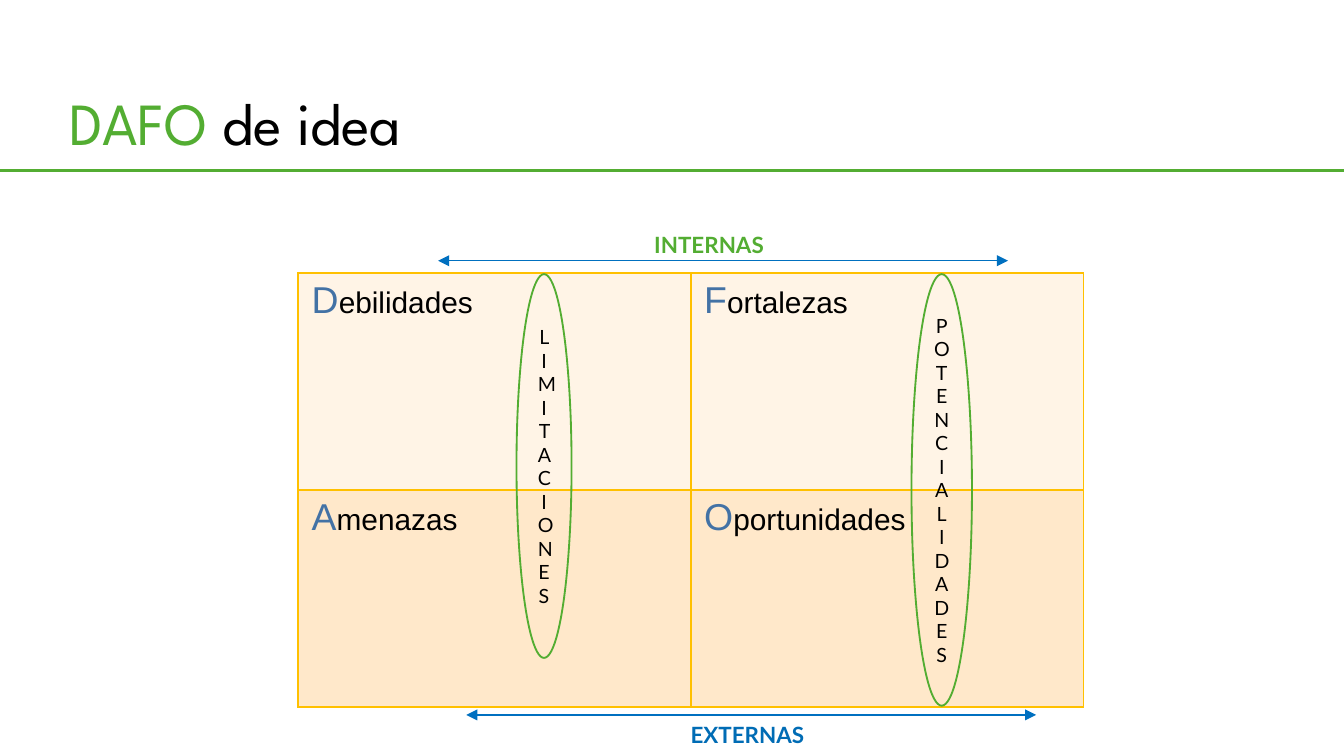
from lxml import etree
from pptx import Presentation
from pptx.dml.color import RGBColor
from pptx.enum import shapes as sh, text as tx
from pptx.oxml.ns import qn
from pptx.util import Pt

HUES = {"green": "53AD32", "blue": "0070C0", "navy": "006CB5", "steel": "4372A5",
        "gold": "FFC000", "black": "000000", "cream": "FFF4E6", "peach": "FFE8CA"}

TITLE = [("DAFO ", "green"), ("de idea", "black")]
GRID = [("cream", ["Debilidades", "Fortalezas"]),
        ("peach", ["Amenazas", "Oportunidades"])]
# left, top, width, height, paragraphs
OVALS = [(276.7, 146.9, 29.5, 205.6, ["L IMITACIONES"]),
         (488.3, 146.9, 32.4, 231.2, ["POTENCIAL", "IDADES"])]
# left, top, width, text, colour
LABELS = [(343.4, 120.2, 118.8, "INTERNAS", "green"),
          (362.9, 383, 126, "EXTERNAS", "navy")]
# from x, to x, y, colour, width, arrowheads
LINES = [(249.8, 555.1, 383, "blue", 0.75, True),
         (234.7, 540, 139.7, "blue", 0.75, True),
         (0, 720, 91.4, "green", 2, False)]
LEFT, TOP, CELL_W, CELL_H = 159.8, 146.2, 210.3, 116.3


def rgb(hue):
    return RGBColor.from_string(HUES[hue])


def write(para, words, size, font, hue="black", bold=False, align=tx.PP_ALIGN.LEFT):
    para.alignment = align
    run = para.add_run()
    run.text = words
    run.font.size, run.font.name, run.font.bold = Pt(size), font, bold
    run.font.color.rgb = rgb(hue)


def edge(cell, hue, width):
    """Draw all four borders of a table cell."""
    props = cell._tc.get_or_add_tcPr()
    for i, side in enumerate("LRTB"):
        line = etree.Element(qn("a:ln" + side), w=str(Pt(width)))
        fill = etree.SubElement(line, qn("a:solidFill"))
        etree.SubElement(fill, qn("a:srgbClr"), val=HUES[hue])
        props.insert(i, line)


def add_grid(slide):
    frame = slide.shapes.add_table(2, 2, Pt(LEFT), Pt(TOP), Pt(2 * CELL_W), Pt(2 * CELL_H))
    table = frame.table
    for i, (fill, names) in enumerate(GRID):
        table.columns[i].width, table.rows[i].height = Pt(CELL_W), Pt(CELL_H)
        for j, name in enumerate(names):
            cell = table.cell(i, j)
            cell.fill.solid()
            cell.fill.fore_color.rgb = rgb(fill)
            edge(cell, "gold", 1)
            para = cell.text_frame.paragraphs[0]
            write(para, name[0], 20, "Arial", "steel")
            write(para, name[1:], 16, "Arial")


def add_oval(slide, left, top, width, height, parts):
    oval = slide.shapes.add_shape(sh.MSO_SHAPE.OVAL, Pt(left), Pt(top), Pt(width), Pt(height))
    oval.shadow.inherit = False
    oval.fill.background()
    oval.line.color.rgb, oval.line.width = rgb("green"), Pt(1)
    frame = oval.text_frame
    frame.word_wrap = True
    frame.vertical_anchor = tx.MSO_ANCHOR.MIDDLE
    for i, part in enumerate(parts):
        para = frame.add_paragraph() if i else frame.paragraphs[0]
        write(para, part, 10.5, "Lato", align=tx.PP_ALIGN.CENTER)


def add_line(slide, start, end, y, hue, width, heads):
    line = slide.shapes.add_connector(sh.MSO_CONNECTOR.STRAIGHT, Pt(start), Pt(y), Pt(end), Pt(y))
    line.line.color.rgb, line.line.width = rgb(hue), Pt(width)
    etree.SubElement(line._element.spPr, qn("a:effectLst"))
    if heads:
        for tag in ("a:headEnd", "a:tailEnd"):
            etree.SubElement(line.line._get_or_add_ln(), qn(tag), type="triangle")


def add_label(slide, left, top, width, words, hue):
    frame = slide.shapes.add_textbox(Pt(left), Pt(top), Pt(width), Pt(21.8)).text_frame
    frame.word_wrap = True
    frame.auto_size = tx.MSO_AUTO_SIZE.SHAPE_TO_FIT_TEXT
    write(frame.paragraphs[0], words, 12, "Lato", hue, bold=True)


def add_title(slide):
    title = slide.shapes.title
    title.left, title.top, title.width, title.height = Pt(30.2), Pt(32.4), Pt(350), Pt(65.5)
    frame = title.text_frame
    frame.word_wrap = True
    frame.auto_size = tx.MSO_AUTO_SIZE.NONE
    frame.vertical_anchor = tx.MSO_ANCHOR.MIDDLE
    for words, hue in TITLE:
        write(frame.paragraphs[0], words, 32, "League Spartan", hue)


def main():
    deck = Presentation()
    deck.slide_width, deck.slide_height = Pt(720), Pt(405)
    slide = deck.slides.add_slide(deck.slide_layouts[5])
    add_title(slide)
    add_grid(slide)
    for add, rows in ((add_oval, OVALS), (add_line, LINES), (add_label, LABELS)):
        for row in rows:
            add(slide, *row)
    deck.save("out.pptx")


if __name__ == "__main__":
    main()
